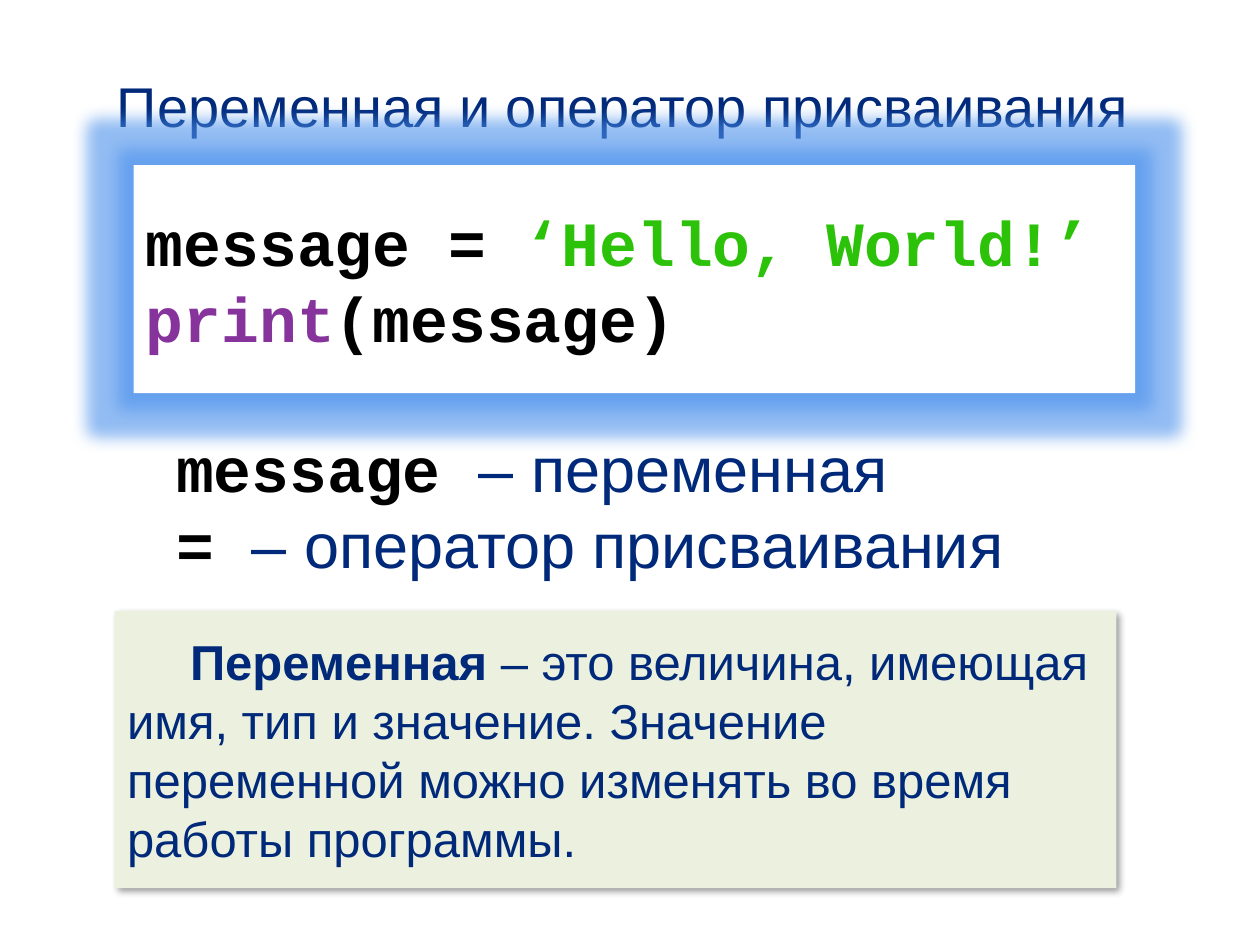
import pptx
import pptx.util
import pptx.dml.color
import pptx.enum.shapes
import pptx.enum.text
import pptx.oxml
import pptx.oxml.ns
from pptx.util import Inches

RGBColor = pptx.dml.color.RGBColor
NAVY = RGBColor(0x00, 0x29, 0x7A)
BLACK = RGBColor(0x00, 0x00, 0x00)
WHITE = RGBColor(0xFF, 0xFF, 0xFF)
GREEN = RGBColor(0x2D, 0xC2, 0x0A)
PURPLE = RGBColor(0x86, 0x34, 0x9C)
PALE_GREEN = RGBColor(0xEB, 0xF1, 0xDE)
GLOW_BLUE = RGBColor(0x4A, 0x90, 0xEC)
BODY_FONT = "Arial"
CODE_FONT = "Courier New"


def color_xml(color, alpha):
    return f'<a:srgbClr val="{color}"><a:alpha val="{alpha * 1000}"/></a:srgbClr>'


def glow_xml(color, radius, alpha):
    return (f'<a:glow {pptx.oxml.ns.nsdecls("a")} rad="{pptx.util.Pt(radius)}">'
            f'{color_xml(color, alpha)}</a:glow>')


def shadow_xml(color, alpha, blur, distance, angle):
    return (f'<a:outerShdw {pptx.oxml.ns.nsdecls("a")} blurRad="{pptx.util.Pt(blur)}" '
            f'dist="{pptx.util.Pt(distance)}" dir="{angle * 60000}" algn="tl" '
            f'rotWithShape="0">{color_xml(color, alpha)}</a:outerShdw>')


class SlideBuilder:
    def __init__(self, s):
        self.s = s

    def code(self, text, color=BLACK):
        return text, CODE_FONT, color, True

    def prose(self, text, bold=False):
        return text, BODY_FONT, NAVY, bold

    def add_lines(self, tf, size, lines):
        """Fill a text frame; each line is a list of (text, font, color, bold)."""
        for i, line in enumerate(lines):
            p = tf.paragraphs[0] if i == 0 else tf.add_paragraph()
            p.alignment = pptx.enum.text.PP_ALIGN.LEFT
            for text, font, color, bold in line:
                r = p.add_run()
                r.text = text
                r.font.name = font
                r.font.size = pptx.util.Pt(size)
                r.font.bold = bold
                r.font.color.rgb = color

    def label(self, x, y, w, h, size, lines):
        sp = self.s.shapes.add_textbox(Inches(x), Inches(y), Inches(w), Inches(h))
        tf = sp.text_frame
        tf.word_wrap = False
        tf.auto_size = pptx.enum.text.MSO_AUTO_SIZE.SHAPE_TO_FIT_TEXT
        self.add_lines(tf, size, lines)

    def panel(self, x, y, w, h, fill, effect, size, lines):
        sp = self.s.shapes.add_shape(pptx.enum.shapes.MSO_SHAPE.RECTANGLE,
                                     Inches(x), Inches(y), Inches(w), Inches(h))
        sp.fill.solid()
        sp.fill.fore_color.rgb = fill
        sp.line.fill.background()
        sp.shadow.inherit = False
        effects = sp._element.spPr.find(pptx.oxml.ns.qn("a:effectLst"))
        effects.append(pptx.oxml.parse_xml(effect))
        tf = sp.text_frame
        tf.word_wrap = True
        tf.vertical_anchor = pptx.enum.text.MSO_ANCHOR.MIDDLE
        self.add_lines(tf, size, lines)


def main():
    prs = pptx.Presentation()
    prs.slide_width, prs.slide_height = Inches(10), Inches(7.5)
    b = SlideBuilder(prs.slides.add_slide(prs.slide_layouts[6]))

    b.label(0.83, 0.52, 8.29, 0.64, 32,
            [[b.prose("Переменная и оператор присваивания")]])
    b.panel(1.06, 1.31, 7.95, 1.81, WHITE, glow_xml(GLOW_BLUE, 18, 60), 36, [
        [b.code("message = "), b.code("‘Hello, World!’", GREEN)],
        [b.code("print", PURPLE), b.code("(message)")],
    ])
    b.label(1.3, 3.36, 6.83, 1.31, 36, [
        [b.code("message "), b.prose("– переменная")],
        [b.code("= "), b.prose("– оператор присваивания")],
    ])
    b.panel(0.91, 4.85, 7.95, 2.2, PALE_GREEN, shadow_xml(BLACK, 40, 4, 3, 45), 28, [
        [b.prose("\tПеременная ", bold=True),
         b.prose("– это величина, имеющая имя, тип и значение. Значение "
                 "переменной можно изменять во время работы программы.")],
    ])
    prs.save("out.pptx")


if __name__ == "__main__":
    main()
